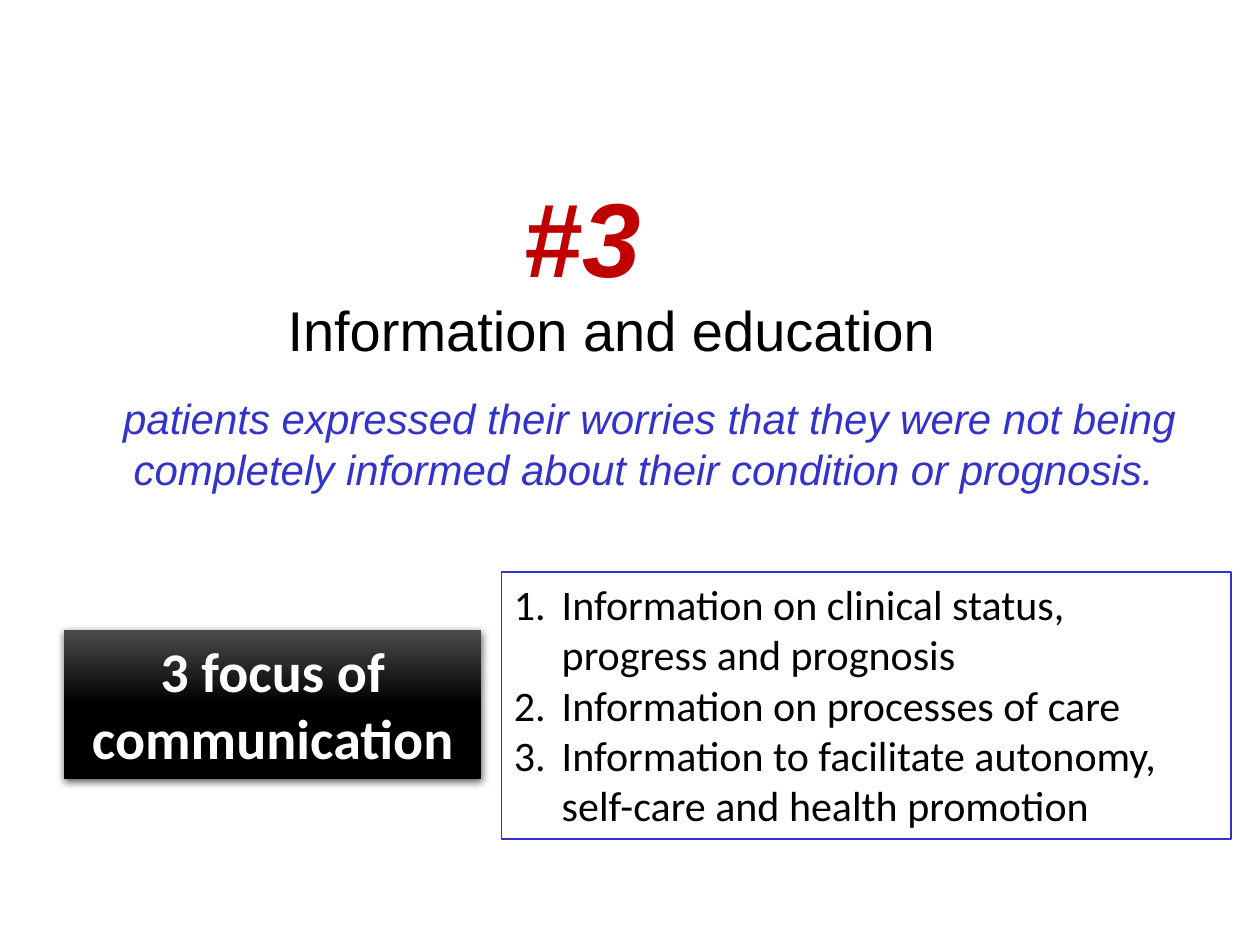
import pptx
import pptx.dml.color
import pptx.enum.shapes
import pptx.enum.text
import pptx.oxml
import pptx.oxml.ns
import pptx.util
from lxml import etree

Inches = pptx.util.Inches
Pt = pptx.util.Pt
CENTER = pptx.enum.text.PP_ALIGN.CENTER
LEFT = pptx.enum.text.PP_ALIGN.LEFT

BLUE = "3333CC"
FOCUS_POINTS = [
    "Information on clinical status, progress and prognosis",
    "Information on processes of care",
    "Information to facilitate autonomy, self-care and health promotion",
]


def color(hex_string):
    return pptx.dml.color.RGBColor.from_string(hex_string)


def format_paragraph(paragraph, size, font, hex_color, align=LEFT, bold=False, italic=False):
    paragraph.alignment = align
    for run in paragraph.runs:
        run.font.size = Pt(size)
        run.font.name = font
        run.font.color.rgb = color(hex_color)
        run.font.bold = bold
        run.font.italic = italic


def add_text(slide, text, left, top, width, height, size, hex_color, **style):
    box = slide.shapes.add_textbox(Inches(left), Inches(top), Inches(width), Inches(height))
    text_frame = box.text_frame
    text_frame.word_wrap = True
    text_frame.text = text
    format_paragraph(text_frame.paragraphs[0], size, "Arial", hex_color, **style)


def add_rectangle(slide, left, top, width, height):
    shape = slide.shapes.add_shape(
        pptx.enum.shapes.MSO_SHAPE.RECTANGLE,
        Inches(left), Inches(top), Inches(width), Inches(height),
    )
    shape.shadow.inherit = False
    shape.text_frame.word_wrap = True
    shape.text_frame.vertical_anchor = pptx.enum.text.MSO_ANCHOR.TOP
    return shape


def add_drop_shadow(shape):
    effects = shape.element.spPr.find(pptx.oxml.ns.qn("a:effectLst"))
    effects.append(pptx.oxml.parse_xml(
        f'<a:outerShdw {pptx.oxml.ns.nsdecls("a")} blurRad="{Pt(4.5)}" dist="{Pt(1.5)}" '
        'dir="5400000" algn="ctr" rotWithShape="0">'
        '<a:srgbClr val="000000"><a:alpha val="63000"/></a:srgbClr></a:outerShdw>'
    ))


def add_gradient_label(slide, text, left, top, width, height):
    shape = add_rectangle(slide, left, top, width, height)
    shape.line.fill.background()
    shape.fill.gradient()
    shape.fill.gradient_angle = 270
    stops = [(0, "4B4B4B"), (0.5, "000000")]
    for stop, (position, hex_color) in zip(shape.fill.gradient_stops, stops):
        stop.position = position
        stop.color.rgb = color(hex_color)
    add_drop_shadow(shape)
    shape.text_frame.text = text
    format_paragraph(shape.text_frame.paragraphs[0], 32, "Calibri", "FFFFFF", CENTER, bold=True)


def add_numbered_box(slide, items, left, top, width, height):
    shape = add_rectangle(slide, left, top, width, height)
    shape.fill.solid()
    shape.fill.fore_color.rgb = color("FFFFFF")
    shape.line.color.rgb = color(BLUE)
    shape.line.width = Pt(1)
    shape.text_frame.text = "\n".join(items)
    for paragraph in shape.text_frame.paragraphs:
        properties = paragraph._p.get_or_add_pPr()
        properties.set("marL", str(Inches(0.38)))
        properties.set("indent", str(Inches(-0.38)))
        etree.SubElement(properties, pptx.oxml.ns.qn("a:buFont"), typeface="+mj-lt")
        etree.SubElement(properties, pptx.oxml.ns.qn("a:buAutoNum"), type="arabicPeriod")
        format_paragraph(paragraph, 24, "Calibri", "000000")


def main():
    presentation = pptx.Presentation()
    presentation.slide_width = Inches(10)
    presentation.slide_height = Inches(7.5)
    slide = presentation.slides.add_slide(presentation.slide_layouts[6])

    # Heading, number and patient concern
    add_text(slide, "Information and education", 0.8, 2.3, 8.11, 0.7, 32, "000000", align=CENTER)
    add_text(slide, "#3", 4.06, 1.32, 1.89, 1.22, 60, "C00000", bold=True, italic=True)
    add_text(
        slide,
        "patients expressed their worries that they were not being "
        "completely informed about their condition or prognosis. ",
        0.51, 3.07, 9.29, 1, 24, BLUE, align=CENTER, italic=True,
    )

    # Focus label and its numbered points
    add_gradient_label(slide, "3 focus of communication", 0.51, 5, 3.31, 1.18)
    add_numbered_box(slide, FOCUS_POINTS, 3.98, 4.54, 5.79, 2.12)

    presentation.save("out.pptx")


if __name__ == "__main__":
    main()
